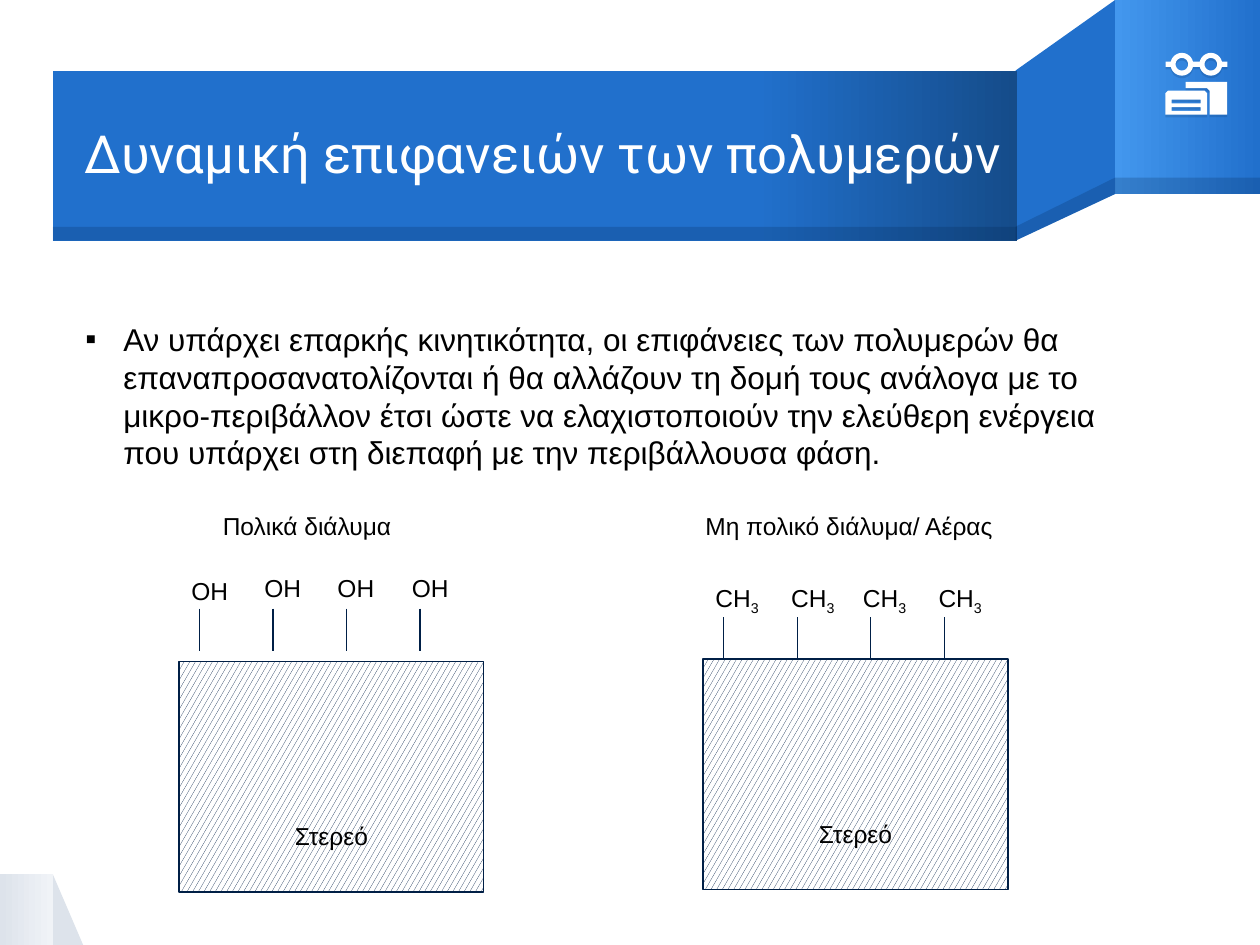
from copy import deepcopy
from dataclasses import dataclass
from math import asin, cos, degrees, radians, sin

from lxml import etree
from pptx import Presentation
from pptx.dml.color import RGBColor
from pptx.enum.dml import MSO_PATTERN
from pptx.enum.shapes import MSO_CONNECTOR, MSO_SHAPE
from pptx.enum.text import MSO_ANCHOR, MSO_AUTO_SIZE, PP_ALIGN
from pptx.oxml.ns import qn
from pptx.util import Inches, Pt

RECTANGLE = MSO_SHAPE.RECTANGLE
TRIANGLE = MSO_SHAPE.RIGHT_TRIANGLE
STRAIGHT = MSO_CONNECTOR.STRAIGHT
HATCH = MSO_PATTERN.LARGE_CONFETTI
MIDDLE, BOTTOM = MSO_ANCHOR.MIDDLE, MSO_ANCHOR.BOTTOM
CENTER = PP_ALIGN.CENTER
GROW = MSO_AUTO_SIZE.SHAPE_TO_FIT_TEXT

BLUE = RGBColor(0x21, 0x70, 0xCC)
LIGHT_BLUE = RGBColor(0x43, 0x97, 0xEE)
DARK_BLUE = RGBColor(0x15, 0x4C, 0x8A)
NAVY = RGBColor(0x00, 0x1F, 0x46)
GRAY = RGBColor(0xDD, 0xE3, 0xEB)
PALE_GRAY = RGBColor(0xF0, 0xF3, 0xF7)
BLACK = RGBColor(0, 0, 0)
WHITE = RGBColor(0xFF, 0xFF, 0xFF)

Point = tuple[float, float]


@dataclass
class Panel:
    """A polymer solid with surface groups facing a medium."""
    medium: str
    medium_box: tuple[float, float, float, float]
    group: str
    subscript: str
    label_width: float
    label_spots: list[Point]
    bond_top: float
    bond_bottom: float
    solid_left: float
    solid_top: float


BOND_OFFSET, BOND_PITCH = 0.165, 0.583
PANELS = [
    Panel("Πολικά διάλυμα", (1.67, 4.01, 1.86, 0.4), "OH", "", 0.58,
          [(1.42, 4.52), (2, 4.5), (2.58, 4.5), (3.17, 4.5)],
          4.83, 5.17, 1.42, 5.25),
    Panel("Μη πολικό διάλυμα/ Αέρας", (5.5, 4.01, 3.03, 0.4), "CH", "3", 0.65,
          [(5.58, 4.58), (6.18, 4.58), (6.75, 4.58), (7.35, 4.58)],
          4.9, 5.23, 5.58, 5.23),
]


def paint(shape, color: RGBColor, alpha: int = 100) -> None:
    shape.shadow.inherit = False
    shape.line.fill.background()
    shape.fill.solid()
    shape.fill.fore_color.rgb = color
    if alpha < 100:
        color_node = shape._element.spPr.find(f"{qn('a:solidFill')}/{qn('a:srgbClr')}")
        etree.SubElement(color_node, qn("a:alpha"), val=str(alpha * 1000))


def add_block(page, kind, left, top, width, height, color, alpha: int = 100):
    shape = page.shapes.add_shape(kind, Inches(left), Inches(top), Inches(width), Inches(height))
    paint(shape, color, alpha)
    return shape


def shade(shape, first: RGBColor, last: RGBColor, hold: int = 0) -> None:
    """Left-to-right gradient that keeps the first colour up to hold percent."""
    shape.fill.gradient()
    shape.fill.gradient_angle = 0
    start, end = shape.fill.gradient_stops
    start.color.rgb, end.color.rgb = first, last
    start.position, end.position = 0, 1
    if hold:
        stop = shape._element.spPr.find(f".//{qn('a:gs')}")
        middle = deepcopy(stop)
        middle.set("pos", str(hold * 1000))
        stop.addnext(middle)


def add_outline(page, contours: list[list[Point]], color: RGBColor, alpha: int = 100):
    first, *others = [[(Inches(x), Inches(y)) for x, y in contour] for contour in contours]
    builder = page.shapes.build_freeform(*first[0])
    builder.add_line_segments(first[1:], close=True)
    for contour in others:
        builder.move_to(*contour[0])
        builder.add_line_segments(contour[1:], close=True)
    shape = builder.convert_to_shape()
    paint(shape, color, alpha)
    return shape


def add_icon_part(page, contours: list[list[Point]]) -> None:
    shape = add_outline(page, contours, WHITE)
    effects = shape._element.spPr.find(qn("a:effectLst"))
    shadow = etree.SubElement(effects, qn("a:outerShdw"), dist=str(Pt(1.5)), dir="5400000")
    color_node = etree.SubElement(shadow, qn("a:srgbClr"), val=str(NAVY))
    etree.SubElement(color_node, qn("a:alpha"), val="15000")


def arc(center_x: float, center_y: float, radius: float, start: float, end: float) -> list[Point]:
    steps = 24
    angles = [radians(start + (end - start) * i / steps) for i in range(steps + 1)]
    return [(center_x + radius * cos(a), center_y + radius * sin(a)) for a in angles]


def frame(left: float, top: float, right: float, bottom: float) -> list[Point]:
    return [(left, top), (right, top), (right, bottom), (left, bottom)]


def add_run(para, text: str, size: float, color: RGBColor = BLACK, font: str = "Arial"):
    run = para.add_run()
    run.text = text
    run.font.size, run.font.name, run.font.color.rgb = Pt(size), font, color
    return run


def add_box(page, left, top, width, height, wrap: bool = False):
    box = page.shapes.add_textbox(Inches(left), Inches(top), Inches(width), Inches(height))
    box.text_frame.word_wrap = wrap
    box.text_frame.auto_size = GROW
    return box.text_frame


def add_background(page) -> None:
    add_block(page, TRIANGLE, 0.42, 6.94, 0.24, 0.56, GRAY)
    shade(add_block(page, RECTANGLE, 0, 6.94, 0.42, 0.56, GRAY), GRAY, PALE_GRAY)
    add_outline(page, [[(8.85, 0), (8.06, 0.56), (8.06, 1.91), (8.85, 1.54)]], BLUE)
    shade(add_block(page, RECTANGLE, 8.85, 0, 1.15, 1.54, BLUE), LIGHT_BLUE, BLUE)
    shade(add_block(page, RECTANGLE, 0.42, 0.56, 7.65, 1.35, BLUE), BLUE, DARK_BLUE, hold=73)
    add_outline(page, [[(8.85, 1.41), (8.06, 1.8), (8.06, 1.91), (8.85, 1.54)]], NAVY, 20)
    add_block(page, RECTANGLE, 8.85, 1.41, 1.15, 0.13, NAVY, 20)
    add_block(page, RECTANGLE, 0.42, 1.8, 7.65, 0.11, NAVY, 20)


def add_title(page) -> None:
    text = add_box(page, 0.67, 0.57, 7.39, 1.34, wrap=True)
    text.auto_size = MSO_AUTO_SIZE.NONE
    text.vertical_anchor = MIDDLE
    text.margin_left = text.margin_right = text.margin_top = text.margin_bottom = 0
    para = text.paragraphs[0]
    para.line_spacing = 0.9
    add_run(para, "Δυναμική επιφανειών των πολυμερών", 30, WHITE, "Roboto")


def add_statement(page) -> None:
    para = add_box(page, 0.58, 2.49, 8.25, 1.31, wrap=True).paragraphs[0]
    para.space_after = Pt(6)
    props = para._p.get_or_add_pPr()
    props.set("marL", str(Inches(0.3)))
    props.set("indent", str(Inches(-0.3)))
    bullet_color = etree.SubElement(props, qn("a:buClr"))
    etree.SubElement(bullet_color, qn("a:srgbClr"), val=str(BLACK))
    etree.SubElement(props, qn("a:buFont"), typeface="Arial")
    etree.SubElement(props, qn("a:buChar"), char="▪")
    add_run(para, "Αν υπάρχει επαρκής κινητικότητα, οι επιφάνειες των πολυμερών θα "
                  "επαναπροσανατολίζονται ή θα αλλάζουν τη δομή τους ανάλογα με το "
                  "μικρο-περιβάλλον έτσι ώστε να ελαχιστοποιούν την ελεύθερη ενέργεια "
                  "που υπάρχει στη διεπαφή με την περιβάλλουσα φάση.", 18)


def add_panel(page, panel: Panel) -> None:
    for i, (left, top) in enumerate(panel.label_spots):
        para = add_box(page, left, top, panel.label_width, 0.4).paragraphs[0]
        add_run(para, panel.group, 14)
        if panel.subscript:
            add_run(para, panel.subscript, 14).font._element.set("baseline", "-25000")
        x = Inches(panel.solid_left + BOND_OFFSET + i * BOND_PITCH)
        bond = page.shapes.add_connector(
            STRAIGHT, x, Inches(panel.bond_top), x, Inches(panel.bond_bottom))
        bond.line.color.rgb, bond.line.width = NAVY, Pt(0.75)
        etree.SubElement(bond._element.spPr, qn("a:effectLst"))

    solid = add_block(page, RECTANGLE, panel.solid_left, panel.solid_top, 2.42, 1.83, WHITE)
    solid.fill.patterned()
    solid.fill.pattern = HATCH
    solid.fill.fore_color.rgb, solid.fill.back_color.rgb = NAVY, WHITE
    solid.line.color.rgb, solid.line.width = NAVY, Pt(0.75)
    text = solid.text_frame
    text.word_wrap = False
    text.vertical_anchor, text.margin_bottom = BOTTOM, Inches(0.33)
    text.paragraphs[0].alignment = CENTER
    add_run(text.paragraphs[0], "Στερεό", 14)
    add_run(add_box(page, *panel.medium_box).paragraphs[0], panel.medium, 14)


def add_reading_icon(page) -> None:
    left_lens, right_lens, axis, radius, half_bar = 9.38, 9.61, 0.51, 0.09, 0.02
    gap = degrees(asin(half_bar / radius))
    rim = [(9.25, axis - half_bar)]
    for lens in (left_lens, right_lens):
        rim += arc(lens, axis, radius, 180 + gap, 360 - gap)
    rim += [(9.74, axis - half_bar), (9.74, axis + half_bar)]
    for lens in (right_lens, left_lens):
        rim += arc(lens, axis, radius, gap, 180 - gap)
    rim.append((9.25, axis + half_bar))
    holes = [arc(lens, axis, 0.05, 360, 0) for lens in (left_lens, right_lens)]
    add_icon_part(page, [rim, *holes])
    add_icon_part(page, [[(9.41, 0.65), (9.74, 0.65), (9.74, 0.91), (9.6, 0.91),
                          (9.6, 0.72), (9.58, 0.7), (9.41, 0.7)]])
    card = [(9.27, 0.72), (9.56, 0.72), (9.58, 0.74), (9.58, 0.91), (9.25, 0.91), (9.25, 0.74)]
    slots = [frame(9.3, top, 9.53, top + 0.03)[::-1] for top in (0.79, 0.85)]
    add_icon_part(page, [card, *slots])


def main() -> None:
    deck = Presentation()
    deck.slide_width, deck.slide_height = Inches(10), Inches(7.5)
    page = deck.slides.add_slide(deck.slide_layouts[6])
    add_background(page)
    add_title(page)
    add_statement(page)
    for panel in PANELS:
        add_panel(page, panel)
    add_reading_icon(page)
    deck.save("out.pptx")


if __name__ == "__main__":
    main()
